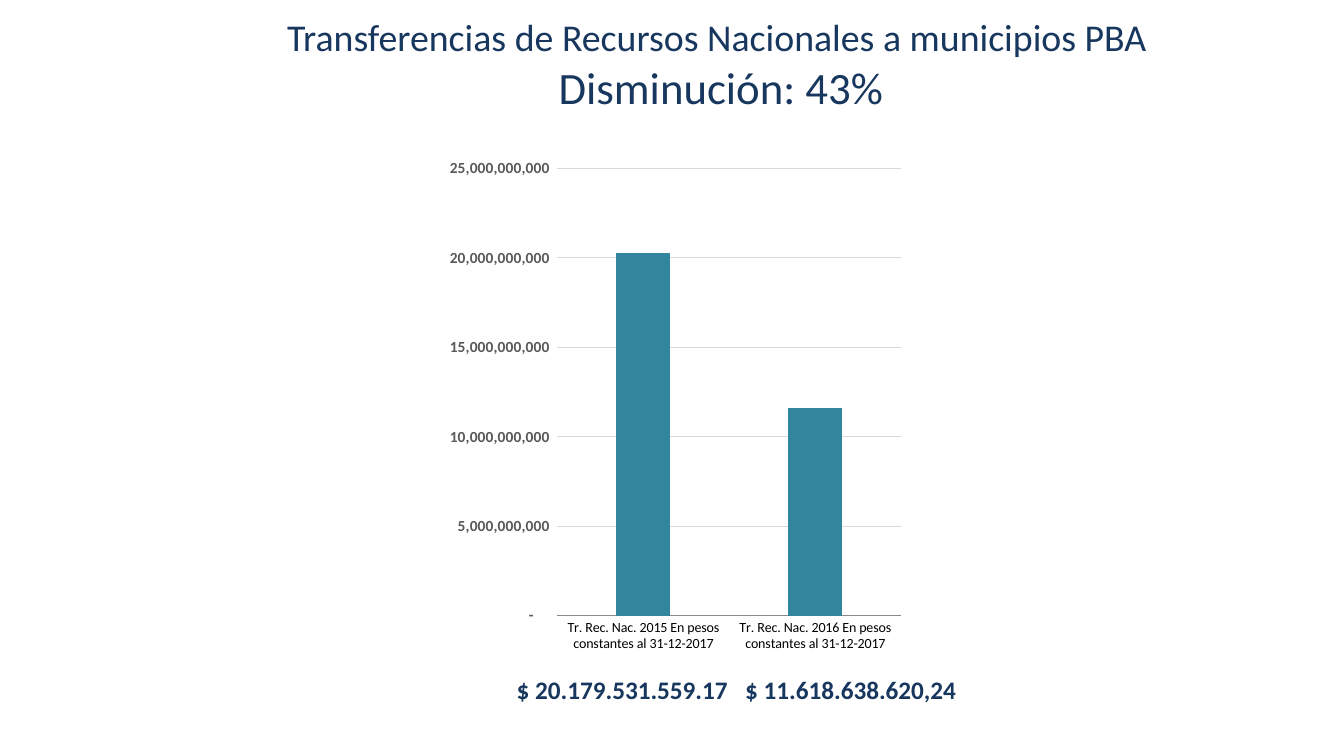
from lxml import etree
from pptx import Presentation
from pptx.chart.data import CategoryChartData
from pptx.dml.color import RGBColor
from pptx.enum.chart import XL_CHART_TYPE, XL_TICK_MARK
from pptx.enum.text import MSO_ANCHOR, MSO_AUTO_SIZE, PP_ALIGN
from pptx.oxml import parse_xml
from pptx.oxml.ns import nsdecls, qn
from pptx.util import Inches, Pt

COLUMN = XL_CHART_TYPE.COLUMN_CLUSTERED
NO_TICK = XL_TICK_MARK.NONE
MIDDLE = MSO_ANCHOR.MIDDLE
NO_FIT = MSO_AUTO_SIZE.NONE
GROW = MSO_AUTO_SIZE.SHAPE_TO_FIT_TEXT
CENTER = PP_ALIGN.CENTER

NAVY = RGBColor(0x17, 0x37, 0x5E)
TEAL = RGBColor(0x31, 0x85, 0x9C)
BLACK = RGBColor(0, 0, 0)
DARK_GREY = RGBColor(0x59, 0x59, 0x59)
AXIS_GREY = RGBColor(0x89, 0x89, 0x89)
GRID_GREY = RGBColor(0xD9, 0xD9, 0xD9)

NUMBER_FORMAT = r'_ * #,##0_ ;_ * \-#,##0_ ;_ * "-"??_ ;_ '


class SlideBuilder:
    font = "Calibri"

    def __init__(self, prs):
        self.width, self.height = prs.slide_width, prs.slide_height
        self.slide = prs.slides.add_slide(prs.slide_layouts[5])

    def box(self, left, top, width, height):
        return (int(left * self.width), int(top * self.height),
                int(width * self.width), int(height * self.height))

    def style(self, font, size, color, bold=False):
        font.name, font.size, font.bold = self.font, Pt(size), bold
        font.color.rgb = color

    def title(self, share, lines):
        sp = self.slide.shapes.title
        sp.left, sp.top, sp.width, sp.height = self.box(*share)
        tf = sp.text_frame
        tf.auto_size, tf.vertical_anchor = NO_FIT, MIDDLE
        tf.text = "\n".join(text for text, size in lines)
        for p, (text, size) in zip(tf.paragraphs, lines):
            p.alignment = CENTER
            self.style(p.font, size, NAVY)

    def amounts(self, share, values, tab):
        sp = self.slide.shapes.add_textbox(*self.box(*share))
        tf = sp.text_frame
        tf.word_wrap, tf.auto_size = True, GROW
        p = tf.paragraphs[0]
        p.text = "\t".join(values)
        self.style(p.font, 18, NAVY, True)
        tabs = etree.Element(qn("a:tabLst"))
        etree.SubElement(tabs, qn("a:tab"), pos=str(int(tab * self.width)), algn="l")
        p._p.get_or_add_pPr().insert(0, tabs)

    def column_chart(self, share, plot_share, categories, values):
        data = CategoryChartData(number_format=NUMBER_FORMAT)
        data.categories = categories
        data.add_series("Series 1", values)
        chart = self.slide.shapes.add_chart(COLUMN, *self.box(*share), data).chart
        chart.has_legend = chart.has_title = False
        self.style(chart.font, 10, BLACK)

        plot = chart.plots[0]
        plot.gap_width, plot.overlap, plot.vary_by_categories = 219, -27, False
        fill = plot.series[0].format.fill
        fill.solid()
        fill.fore_color.rgb = TEAL

        for axis in (chart.category_axis, chart.value_axis):
            axis.major_tick_mark = axis.minor_tick_mark = NO_TICK
        self.style(chart.category_axis.tick_labels.font, 10, BLACK)
        line = chart.category_axis.format.line
        line.width, line.color.rgb = Pt(0.75), AXIS_GREY

        axis = chart.value_axis
        axis.minimum_scale, axis.maximum_scale, axis.major_unit = 0, 25e9, 5e9
        axis.format.line.fill.background()
        self.style(axis.tick_labels.font, 11, DARK_GREY, True)
        axis.tick_labels.number_format = NUMBER_FORMAT
        axis.tick_labels.number_format_is_linked = False
        line = axis.major_gridlines.format.line
        line.width, line.color.rgb = Pt(0.75), GRID_GREY
        self.place_plot(chart, plot_share)

    def place_plot(self, chart, share):
        area = chart.plots[0]._element.getparent()
        for layout in area.findall(qn("c:layout")):
            area.remove(layout)
        settings = [("layoutTarget", "inner"), ("xMode", "edge"), ("yMode", "edge"),
                    *zip("xywh", share)]
        body = "".join(f'<c:{tag} val="{val}"/>' for tag, val in settings)
        area.insert(0, parse_xml(
            f'<c:layout {nsdecls("c")}><c:manualLayout>{body}</c:manualLayout></c:layout>'))


def main():
    prs = Presentation()
    prs.slide_width, prs.slide_height = Inches(13.33), Inches(7.5)
    s = SlideBuilder(prs)
    s.title((0.171, 0, 0.731, 0.168),
            [("Transferencias de Recursos Nacionales a municipios PBA ", 27),
             ("Disminución: 43%", 32)])
    s.column_chart((0.316, 0.156, 0.363, 0.735), (0.272, 0.091, 0.705, 0.805),
                   [f"Tr. Rec. Nac. {year} En pesos constantes al 31-12-2017"
                    for year in (2015, 2016)],
                   [20.3e9, 11.6e9])
    s.amounts((0.377, 0.885, 0.413, 0.053),
              ["$ 20.179.531.559.17", "$ 11.618.638.620,24"], 0.17)
    prs.save("out.pptx")


if __name__ == "__main__":
    main()
